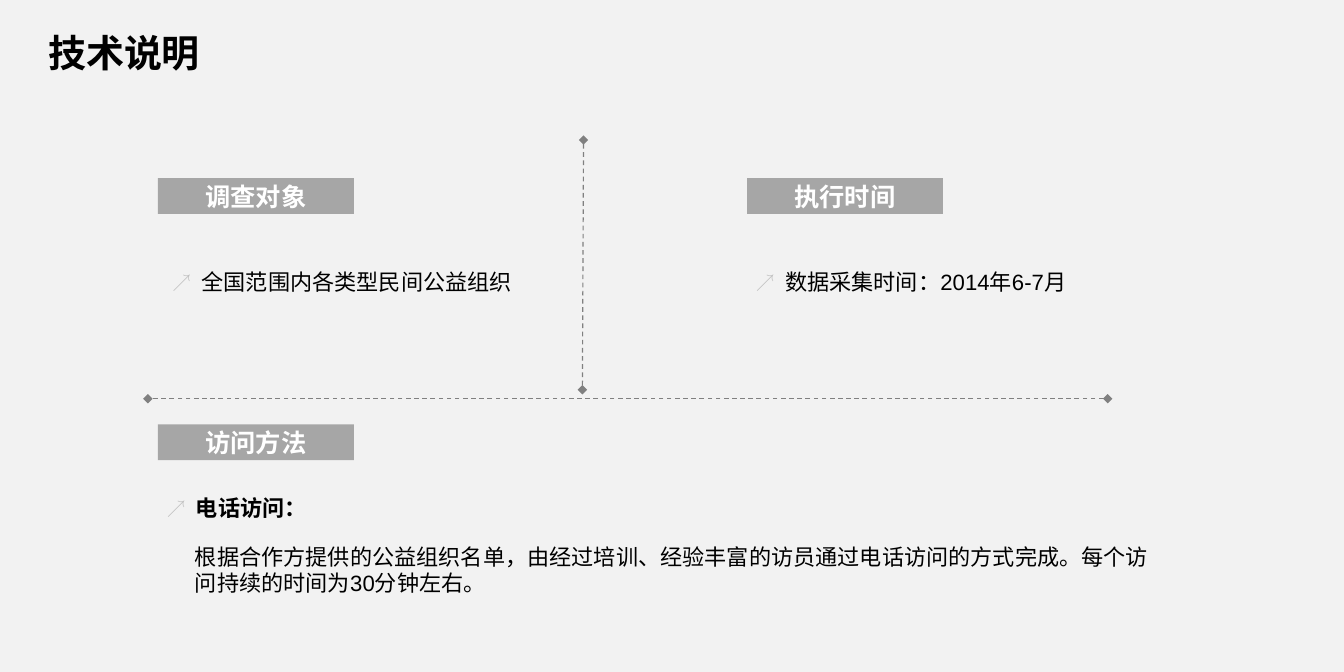
from dataclasses import dataclass

from lxml.etree import SubElement
from pptx import Presentation
from pptx.dml.color import RGBColor
from pptx.enum.dml import MSO_LINE_DASH_STYLE as Dash
from pptx.enum.shapes import MSO_CONNECTOR as Connector, MSO_SHAPE as Shape
from pptx.enum.text import MSO_ANCHOR as Anchor, MSO_AUTO_SIZE as AutoSize, PP_ALIGN as Align
from pptx.oxml.ns import qn
from pptx.util import Pt

PX = 9000  # EMU per px: 30 by 15 cm is 1200 by 600 px


@dataclass(frozen=True)
class Theme:
    font: str = "Arial"
    background: str = "F2F2F2"
    label_fill: str = "A6A6A6"
    label_text: str = "FFFFFF"
    text: str = "000000"
    bullet: str = "BFBFBF"
    divider: str = "808080"
    title_size: int = 24
    label_size: int = 16
    body_size: int = 14


THEME = Theme()


def rgb(value):
    return RGBColor.from_string(value)


def scaled(*lengths):
    return [length * PX for length in lengths]


def set_text(para, text, size, color=THEME.text, bold=False):
    para.text = text
    para.font.name = THEME.font
    para.font.size = Pt(size)
    para.font.bold = bold
    para.font.color.rgb = rgb(color)


def add_text(slide, box, text, size=THEME.body_size, bold=False):
    frame = slide.shapes.add_textbox(*scaled(*box)).text_frame
    frame.word_wrap = True
    para = frame.paragraphs[0]
    set_text(para, text, size, bold=bold)
    return frame, para


def add_title(slide, box, text):
    frame, _ = add_text(slide, box, text, THEME.title_size, bold=True)
    frame.vertical_anchor = Anchor.MIDDLE


def add_bullet(slide, box, text, spacing=1.2, bold=False):
    """Add a text box whose one paragraph hangs from a pale arrow bullet."""
    frame, para = add_text(slide, box, text, bold=bold)
    frame.auto_size = AutoSize.SHAPE_TO_FIT_TEXT
    para.line_spacing = spacing
    properties = para._p.get_or_add_pPr()
    indent = 26 * PX
    properties.set("marL", str(indent))
    properties.set("indent", str(-indent))
    # The schema puts the bullet's parts before the paragraph's default font.
    default_font = properties.find(qn("a:defRPr"))
    color = SubElement(properties, qn("a:buClr"))
    SubElement(color, qn("a:srgbClr"), val=THEME.bullet)
    SubElement(properties, qn("a:buSzPct"), val="85000")
    SubElement(properties, qn("a:buFont"), typeface=THEME.font)
    SubElement(properties, qn("a:buChar"), char="↗")
    properties.append(default_font)


def add_label(slide, left, top, text):
    label = slide.shapes.add_shape(Shape.RECTANGLE, *scaled(left, top, 175, 32))
    label.shadow.inherit = False
    label.fill.solid()
    label.fill.fore_color.rgb = rgb(THEME.label_fill)
    label.line.fill.background()
    frame = label.text_frame
    frame.word_wrap = False
    frame.vertical_anchor = Anchor.MIDDLE
    para = frame.paragraphs[0]
    para.alignment = Align.CENTER
    set_text(para, text, THEME.label_size, THEME.label_text, bold=True)


def add_divider(slide, *ends):
    """Add a dashed line with a diamond at both ends."""
    divider = slide.shapes.add_connector(Connector.STRAIGHT, *scaled(*ends))
    divider.line.color.rgb = rgb(THEME.divider)
    divider.line.width = Pt(0.75)
    divider.line.dash_style = Dash.DASH
    outline = divider.line._get_or_add_ln()
    for end in ("a:headEnd", "a:tailEnd"):
        SubElement(outline, qn(end), type="diamond")
    SubElement(divider._element.spPr, qn("a:effectLst"))


def add_fact(slide, box, label, fact, shift):
    """Add a label and, shifted sideways below it, one bulleted line."""
    left, top, width, height = box
    add_label(slide, left, top, label)
    add_bullet(slide, (left + shift, top + 71, width, height - 71), fact)


def add_method(slide, box, label, heading, body):
    left, top, width, height = box
    add_label(slide, left, top, label)
    add_bullet(slide, (left - 2, top + 46, width - 88, 42), heading, 1.5, bold=True)
    add_text(slide, (left + 23, top + 101, width - 23, height - 101), body)


def build_technical_notes(deck):
    slide = deck.slides.add_slide(deck.slide_layouts[6])
    slide.background.fill.solid()
    slide.background.fill.fore_color.rgb = rgb(THEME.background)
    add_title(slide, (33, 18, 1181, 57), "技术说明")
    add_fact(slide, (141, 159, 370, 107), "调查对象", "全国范围内各类型民间公益组织", 3)
    add_fact(slide, (667, 159, 443, 107), "执行时间", "数据采集时间：2014年6-7月", -2)
    add_divider(slide, 521, 125, 520, 348)
    add_divider(slide, 989, 356, 132, 356)
    add_method(
        slide, (141, 379, 912, 159), "访问方法", "电话访问：",
        "根据合作方提供的公益组织名单，由经过培训、经验丰富的访员通过电话访问的方式完成。"
        "每个访问持续的时间为30分钟左右。",
    )


def main():
    deck = Presentation()
    deck.slide_width, deck.slide_height = scaled(1200, 600)
    build_technical_notes(deck)
    deck.save("out.pptx")


if __name__ == "__main__":
    main()
